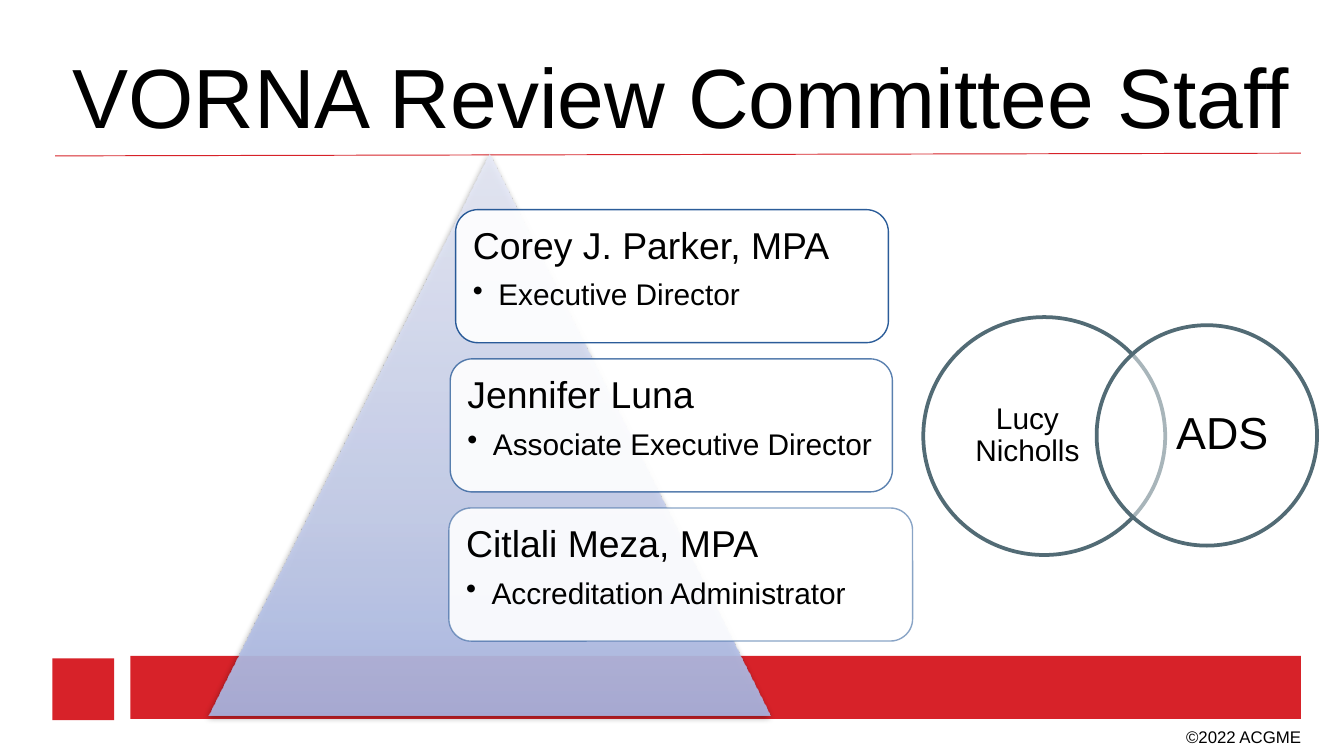
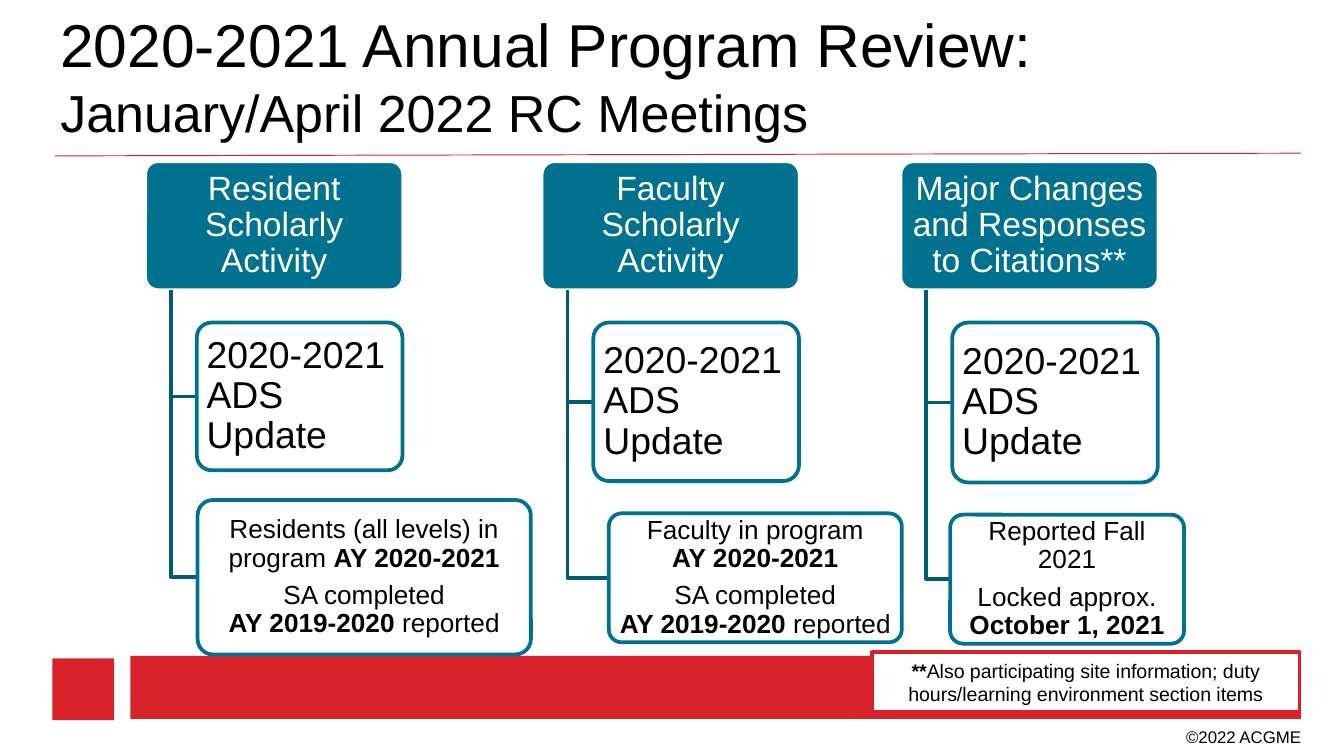
from dataclasses import dataclass
from lxml.etree import SubElement
from pptx import Presentation
from pptx.dml.color import RGBColor
from pptx.enum.shapes import MSO_CONNECTOR, MSO_SHAPE
from pptx.enum.text import MSO_ANCHOR, PP_ALIGN
from pptx.oxml import parse_xml
from pptx.oxml.ns import nsdecls, qn
from pptx.util import Inches, Pt


@dataclass(frozen=True)
class Theme:
    font: str = "Arial"
    black: str = "000000"
    white: str = "FFFFFF"
    red: str = "D72229"
    navy: str = "144B8E"
    slate: str = "526B75"
    teal: str = "00728F"
    branch: str = "005B73"
    title: float = 45
    heading: float = 32.4
    subheading: float = 27.9
    ads: float = 24
    name: float = 20
    header: float = 18
    role: float = 16
    detail: float = 14
    note: float = 10.5
    footer: float = 9


T = Theme()
prs = Presentation()
prs.slide_width, prs.slide_height = Inches(10), Inches(5.625)
COL, ROW = prs.slide_width / 100, prs.slide_height / 56.25


def box(slide, kind, x, y, w, h, fill=None, alpha=100, line=None, width=2, line_alpha=100):
    at = int(x * COL), int(y * ROW), int(w * COL), int(h * ROW)
    if kind is None:
        return slide.shapes.add_textbox(*at)
    sp = slide.shapes.add_shape(kind, *at)
    sp.shadow.inherit = False
    if fill:
        sp.fill.solid()
        sp.fill.fore_color.rgb = RGBColor.from_string(fill)
    if line:
        sp.line.color.rgb = RGBColor.from_string(line)
        sp.line.width = Pt(width)
    else:
        sp.line.fill.background()
    for holder, share in ((sp._element.spPr, alpha), (sp.line._get_or_add_ln(), line_alpha)):
        clr = holder.find(qn("a:solidFill") + "/" + qn("a:srgbClr"))
        if clr is not None and share < 100:
            SubElement(clr, qn("a:alpha"), val=str(share * 1000))
    return sp


def write(sp, paras, align=PP_ALIGN.CENTER, anchor=MSO_ANCHOR.MIDDLE,
          color=T.black, insets=(1, 0.5, 1, 0.5), tight=True):
    tf = sp.text_frame
    tf.word_wrap = True
    tf.vertical_anchor = anchor
    tf.margin_left, tf.margin_top, tf.margin_right, tf.margin_bottom = (int(i * COL) for i in insets)
    for i, runs in enumerate(paras):
        p = tf.paragraphs[0] if i == 0 else tf.add_paragraph()
        p.alignment = align
        if tight:
            p.line_spacing = 0.9
            p.space_after = Pt(round(runs[0][0] * 0.35, 1))
        for size, text, *bold in runs:
            for n, piece in enumerate(text.split("\n")):
                if n:
                    p.add_line_break()
                if piece:
                    r = p.add_run()
                    r.text = piece
                    r.font.name, r.font.size, r.font.bold = T.font, Pt(size), bool(bold)
                    r.font.color.rgb = RGBColor.from_string(color)
    return tf


slides = [prs.slides.add_slide(prs.slide_layouts[6]) for _ in range(2)]
for s in slides:
    box(s, MSO_SHAPE.RECTANGLE, 9.7, 48.8, 87.1, 4.7, T.red)
    footer = write(box(s, None, 87.1, 53.6, 10.7, 2.5), [[(T.footer, "©2022 ACGME")]],
                   PP_ALIGN.RIGHT, MSO_ANCHOR.TOP, tight=False)
    footer.word_wrap = False
    rule = s.shapes.add_connector(MSO_CONNECTOR.STRAIGHT, int(4.1 * COL), int(11.6 * ROW),
                                  int(96.8 * COL), int(11.4 * ROW))
    rule.line.color.rgb = RGBColor.from_string(T.red)
    rule.line.width = Pt(0.5)
    SubElement(rule._element.spPr, qn("a:effectLst"))
    box(s, MSO_SHAPE.RECTANGLE, 3.9, 49, 4.6, 4.6, T.red)

staff, review = slides

pyramid = box(staff, MSO_SHAPE.ISOSCELES_TRIANGLE, 15.5, 11.4, 41.8, 41.8)
stops = "".join(
    f'<a:gs pos="{pos}000"><a:srgbClr val="{c}"><a:alpha val="90000"/></a:srgbClr></a:gs>'
    for pos, c in ((0, "A9B7E4"), (35, "C4CDEB"), (100, "E8EBF8")))
spPr = pyramid._element.spPr
spPr.find(qn("a:prstGeom")).addnext(parse_xml(
    f'<a:gradFill {nsdecls("a")} rotWithShape="1"><a:gsLst>{stops}</a:gsLst>'
    '<a:lin ang="16200000" scaled="0"/></a:gradFill>'))
shadow = SubElement(spPr.find(qn("a:effectLst")), qn("a:outerShdw"), blurRad=str(Pt(3.1)),
                    dist=str(Pt(1.6)), dir="5400000", rotWithShape="0")
SubElement(SubElement(shadow, qn("a:srgbClr"), val=T.black), qn("a:alpha"), val="38000")

people = [
    ("Corey J. Parker, MPA", "Executive Director", 33.9, 32.2, 90),
    ("Jennifer Luna", "Associate Executive Director", 33.5, 32.9, 70),
    ("Citlali Meza, MPA", "Accreditation Administrator", 33.4, 34.5, 50),
]
for i, (name, role, x, w, line_alpha) in enumerate(people):
    sp = box(staff, MSO_SHAPE.ROUNDED_RECTANGLE, x, 15.6 + 11.1 * i, w, 9.9, T.white, 90,
             T.navy, 0.75, line_alpha)
    tf = write(sp, [[(T.name, name)], [(T.role, role)]], PP_ALIGN.LEFT, MSO_ANCHOR.TOP,
               insets=(0.8,) * 4)
    p = tf.paragraphs[1]
    p.level = 1
    p.space_after = Pt(2.4)
    pPr = p._p.get_or_add_pPr()
    pPr.set("marL", str(int(1.9 * COL)))
    pPr.set("indent", str(int(-1.9 * COL)))
    SubElement(pPr, qn("a:buChar"), char="•")

circles = [
    (68.7, 23.6, 18, 17.7, T.role, "Lucy Nicholls", (0, 0, 2.5, 0)),
    (81.6, 24.2, 16.4, 16.4, T.ads, "ADS", (2.3, 0, 0, 0)),
]
for x, y, w, h, size, text, insets in circles:
    sp = box(staff, MSO_SHAPE.OVAL, x, y, w, h, T.white, 50, T.slate)
    write(sp, [[(size, text)]], insets=insets)

write(box(staff, None, 2.7, 1.6, 95.9, 9.7), [[(T.title, "VORNA Review Committee Staff")]],
      anchor=MSO_ANCHOR.BOTTOM, tight=False)

completed = [(T.detail, "SA completed\n"), (T.detail, "AY 2019-2020 ", True), (T.detail, "reported")]
columns = [
    (10.8, "Resident Scholarly Activity", 11, (14.7, 37.2, 24.8, 11.5),
     [[(T.detail, "Residents (all levels) in program "), (T.detail, "AY 2020-2021", True)], completed]),
    (40.3, "Faculty Scholarly Activity", 11.8, (45.3, 38.2, 21.8, 9.6),
     [[(T.detail, "Faculty in program\n"), (T.detail, "AY 2020-2021", True)], completed]),
    (67, "Major Changes and Responses to Citations**", 11.9, (70.7, 38.3, 17.4, 9.6),
     [[(T.detail, "Reported Fall 2021")],
      [(T.detail, "Locked approx.\n"), (T.detail, "October 1, 2021", True)]]),
]
wide, narrow = (0.4, 0.3, 0.4, 0.3), (0.3, 0.2, 0.3, 0.2)
for x, header, update_h, detail_at, detail in columns:
    sp = box(review, MSO_SHAPE.ROUNDED_RECTANGLE, x, 12, 19.2, 9.6, T.teal, line=T.white)
    sp.adjustments[0] = 0.1
    write(sp, [[(T.header, header)]], color=T.white, insets=wide)
    children = [
        ((x + 3.85, 24, 15.3, update_h), [[(T.name, "2020-2021 ADS Update")]], PP_ALIGN.LEFT, wide),
        (detail_at, detail, PP_ALIGN.CENTER, narrow),
    ]
    for at, paras, align, insets in children:
        trunk, middle = x + 1.92, at[1] + at[3] / 2
        fb = review.shapes.build_freeform(int(trunk * COL), int(21.6 * ROW))
        fb.add_line_segments([(int(trunk * COL), int(middle * ROW)),
                              (int(at[0] * COL), int(middle * ROW))], close=False)
        elbow = fb.convert_to_shape()
        elbow.shadow.inherit = False
        elbow.fill.background()
        elbow.line.color.rgb = RGBColor.from_string(T.branch)
        elbow.line.width = Pt(2)
        sp = box(review, MSO_SHAPE.ROUNDED_RECTANGLE, *at, T.white, 90, T.teal)
        sp.adjustments[0] = 0.1
        write(sp, paras, align, insets=insets)

sp = box(review, MSO_SHAPE.RECTANGLE, 64.9, 48.5, 31.8, 4.5, T.white, line=T.red)
write(sp, [[(T.note, "**", True),
            (T.note, "Also participating site information; duty hours/learning environment section items")]],
      anchor=MSO_ANCHOR.TOP, tight=False)
write(box(review, None, 3.5, 1.7, 100 - 3.5, 9.4),
      [[(T.heading, "2020-2021 Annual Program Review:\n"),
        (T.subheading, "January/April 2022 RC Meetings")]],
      PP_ALIGN.LEFT, MSO_ANCHOR.BOTTOM, tight=False)

prs.save("out.pptx")
